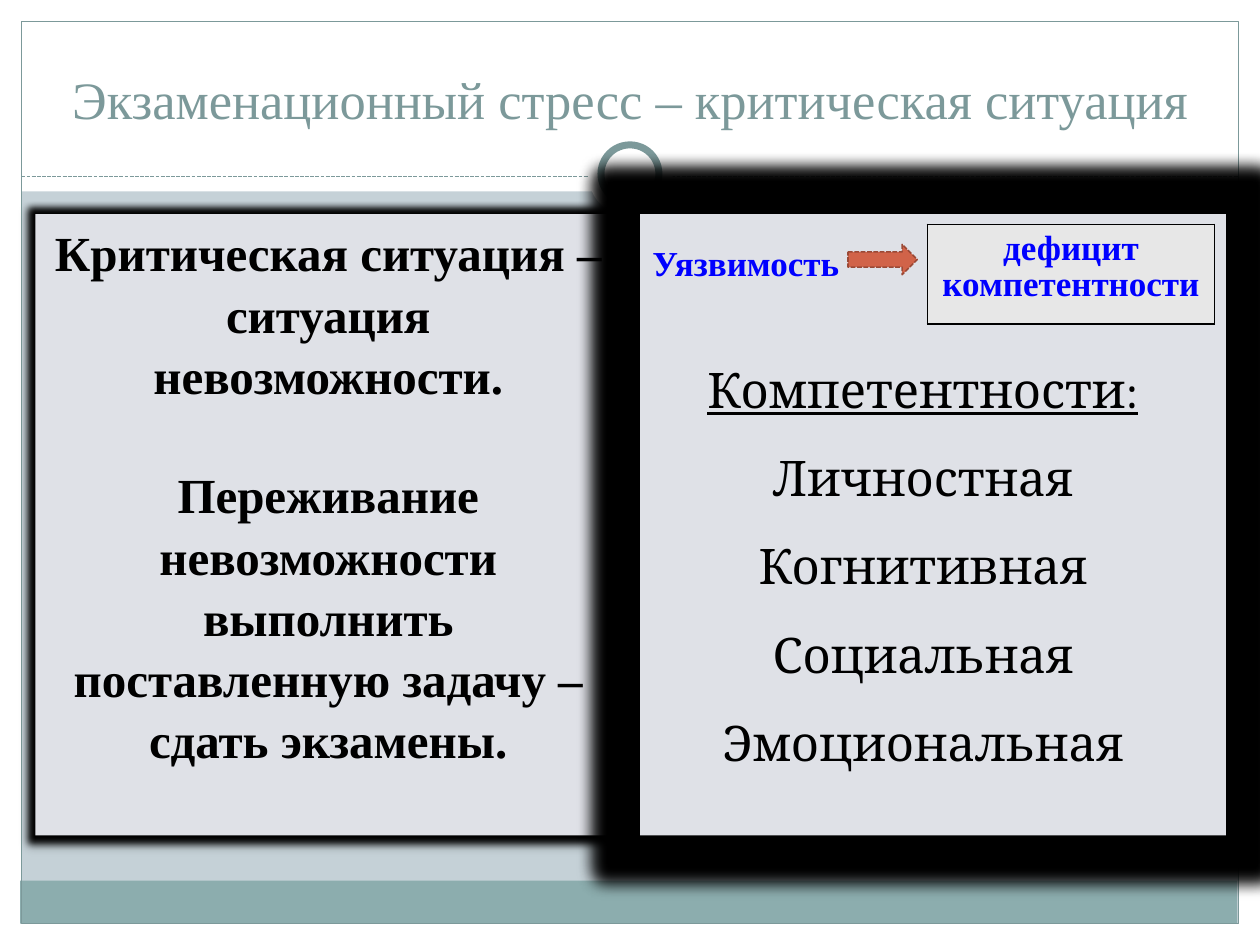
from pptx import Presentation
from pptx.dml.color import RGBColor
from pptx.enum.dml import MSO_LINE as Dash
from pptx.enum.shapes import MSO_CONNECTOR as Conn, MSO_SHAPE as Kind
from pptx.enum.text import MSO_ANCHOR as Anchor, PP_ALIGN as Align
from pptx.oxml import parse_xml
from pptx.oxml.ns import nsdecls
from pptx.util import Inches, Pt

WHITE = RGBColor(0xFF, 0xFF, 0xFF)
BLACK = RGBColor(0x00, 0x00, 0x00)
BLUE = RGBColor(0x00, 0x00, 0xFF)
SKY = RGBColor(0xC5, 0xD1, 0xD7)
TEAL = RGBColor(0x8C, 0xAD, 0xAE)
SLATE = RGBColor(0x7C, 0x99, 0x9A)
PALE = RGBColor(0xDF, 0xE1, 0xE7)
GREY = RGBColor(0xE7, 0xE7, 0xE7)
RUST = RGBColor(0xD1, 0x63, 0x49)
BROWN = RGBColor(0x9B, 0x49, 0x36)
SERIF = "Times New Roman"


class Deck:
    """Holds the style and the current slide."""

    def __init__(self):
        self.prs = Presentation()
        self.prs.slide_width, self.prs.slide_height = Inches(10), Inches(7.5)
        self.slide = self.prs.slides.add_slide(self.prs.slide_layouts[1])
        self.shapes = self.slide.shapes
        self.paint(self.slide.background, SKY)

    def paint(self, item, color):
        fill = item.fill
        fill.solid()
        fill.fore_color.rgb = color

    def shape(self, kind, box, fill=None, line=None, width=0.75, dash=None):
        item = self.shapes.add_shape(kind, *map(Inches, box))
        item.shadow.inherit = False
        if fill is None:
            item.fill.background()
        else:
            self.paint(item, fill)
        if line is None:
            item.line.fill.background()
        else:
            item.line.color.rgb = line
            item.line.width = Pt(width)
            item.line.dash_style = dash
        return item

    def rule(self, left, right, top):
        ends = map(Inches, (left, top, right, top))
        item = self.shapes.add_connector(Conn.STRAIGHT, *ends)
        item.line.color.rgb = SLATE
        item.line.width = Pt(0.75)
        item.line.dash_style = Dash.SQUARE_DOT
        item.element.spPr.append(parse_xml(f"<a:effectLst {nsdecls('a')}/>"))

    def holder(self, item, box):
        item.left, item.top, item.width, item.height = map(Inches, box)
        item.element.getparent().append(item.element)

    def glow(self, item, size):
        item.shadow.inherit = True
        item.element.spPr.append(parse_xml(
            f'<a:effectLst {nsdecls("a")}><a:glow rad="{Pt(size)}">'
            '<a:srgbClr val="000000"/></a:glow>'
            f'<a:outerShdw blurRad="{Pt(3.5)}" dist="{Pt(2.2)}" dir="5400000" '
            'rotWithShape="0"><a:srgbClr val="000000"><a:alpha val="32000"/>'
            '</a:srgbClr></a:outerShdw></a:effectLst>'))

    def put(self, frame, lines, size, color, font=SERIF, bold=False,
            align=Align.CENTER, pitch=1.0, gap=0, under=()):
        frame.word_wrap = True
        for num, line in enumerate(lines):
            para = frame.add_paragraph() if num else frame.paragraphs[0]
            para.alignment = align
            para.line_spacing = pitch
            para.space_before = Pt(gap if num else 0)
            props = para._p.get_or_add_pPr()
            props.set("marL", "0")
            props.set("indent", "0")
            props.append(parse_xml(f"<a:buNone {nsdecls('a')}/>"))
            run = para.add_run()
            run.text = line
            run.font.name = font
            run.font.size = Pt(size)
            run.font.bold = bold
            run.font.underline = num in under
            run.font.color.rgb = color

    def text(self, box, lines, size, color, **style):
        item = self.shapes.add_textbox(*map(Inches, box))
        self.put(item.text_frame, lines, size, color, **style)

    def table(self, box, line, size, color, fill):
        grid = self.shapes.add_table(1, 1, *map(Inches, box)).table
        grid.first_row = grid.horz_banding = False
        cell = grid.cell(0, 0)
        props = cell._tc.get_or_add_tcPr()
        for side in "LRTB":
            props.append(parse_xml(
                f'<a:ln{side} {nsdecls("a")} w="{Pt(1)}"><a:solidFill>'
                f'<a:srgbClr val="{BLACK}"/></a:solidFill></a:ln{side}>'))
        self.paint(cell, fill)
        self.put(cell.text_frame, [line], size, color, bold=True, pitch=0.95)


def main():
    deck = Deck()
    title, body = deck.shapes.title, deck.slide.placeholders[1]

    for box in ((0, 7.33, 10, 0.17), (0, 0, 10, 1.52),
                (0, 0, 0.17, 7.5), (9.83, 0, 0.17, 7.5)):
        deck.shape(Kind.RECTANGLE, box, WHITE)
    deck.shape(Kind.RECTANGLE, (0.16, 6.99, 9.66, 0.34), TEAL)
    deck.shape(Kind.RECTANGLE, (0.17, 0.17, 9.66, 7.16), line=SLATE)
    deck.rule(0.17, 9.83, 1.4)
    deck.shape(Kind.OVAL, (4.67, 1.05, 0.67, 0.67), WHITE)
    deck.shape(Kind.OVAL, (4.77, 1.15, 0.46, 0.46), WHITE, SLATE, 4)

    deck.holder(title, (0.2, 0.29, 9.61, 0.79))
    title.text_frame.vertical_anchor = Anchor.BOTTOM
    deck.put(title.text_frame,
             ["Экзаменационный стресс – критическая ситуация"], 30, SLATE)

    deck.holder(body, (0.28, 1.7, 4.65, 4.93))
    deck.paint(body, PALE)
    deck.glow(body, 8)
    deck.put(body.text_frame, [
        "Критическая ситуация – ситуация невозможности.",
        "Переживание невозможности выполнить поставленную задачу – сдать экзамены.",
    ], 28, BLACK, bold=True, pitch=1.04, gap=33.5)

    panel = deck.shape(Kind.RECTANGLE, (5.08, 1.7, 4.65, 4.93), PALE)
    deck.glow(panel, 18)
    panel.text_frame.vertical_anchor = Anchor.TOP
    deck.put(panel.text_frame, ["Уязвимость"], 20, BLUE, bold=True,
             align=Align.LEFT, pitch=1.5)
    deck.shape(Kind.RIGHT_ARROW, (6.73, 1.94, 0.55, 0.24), RUST, BROWN, 0.9,
               Dash.SQUARE_DOT)
    deck.table((7.36, 1.78, 2.28, 0.79), "дефицит компетентности", 20, BLUE, GREY)
    deck.text((5.24, 2.57, 4.17, 3.64), [
        "Компетентности:", "Личностная", "Когнитивная", "Социальная",
        "Эмоциональная",
    ], 28, BLACK, font="Cambria", pitch=1.5, under=(0,))

    deck.prs.save("out.pptx")


if __name__ == "__main__":
    main()
